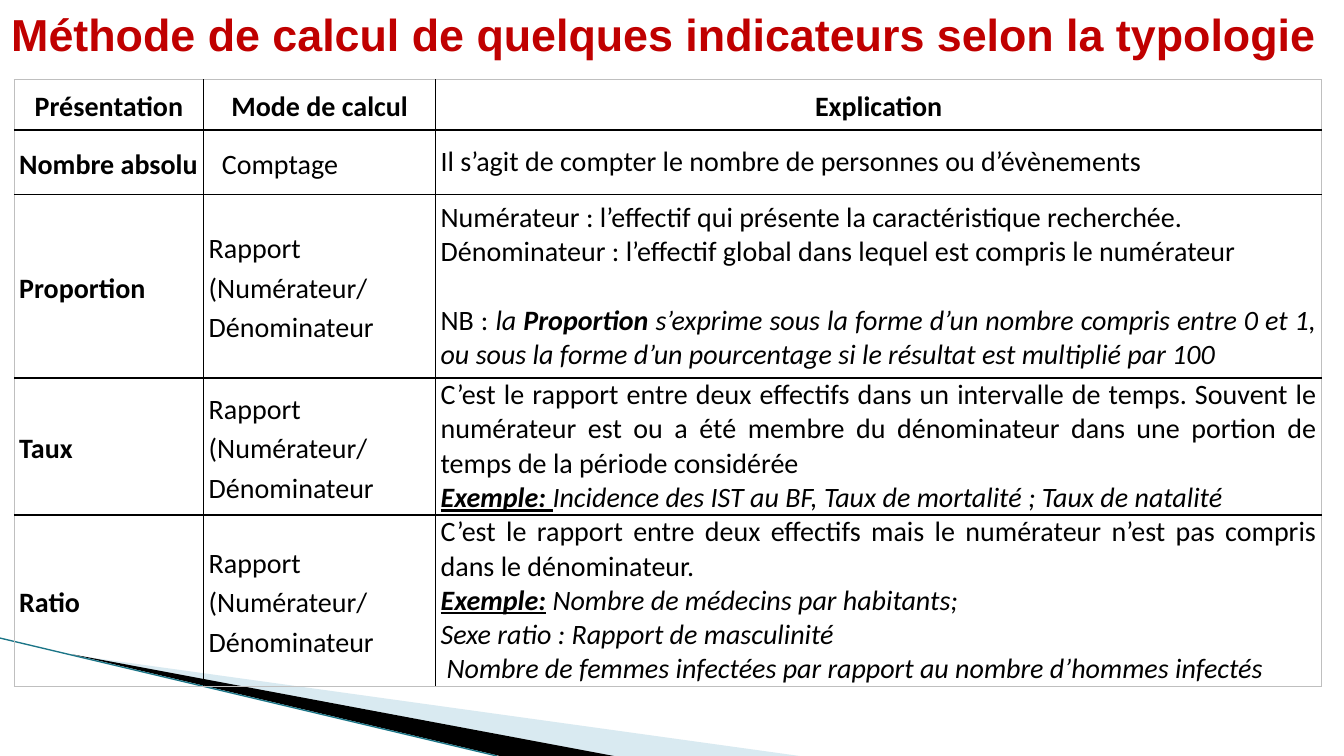
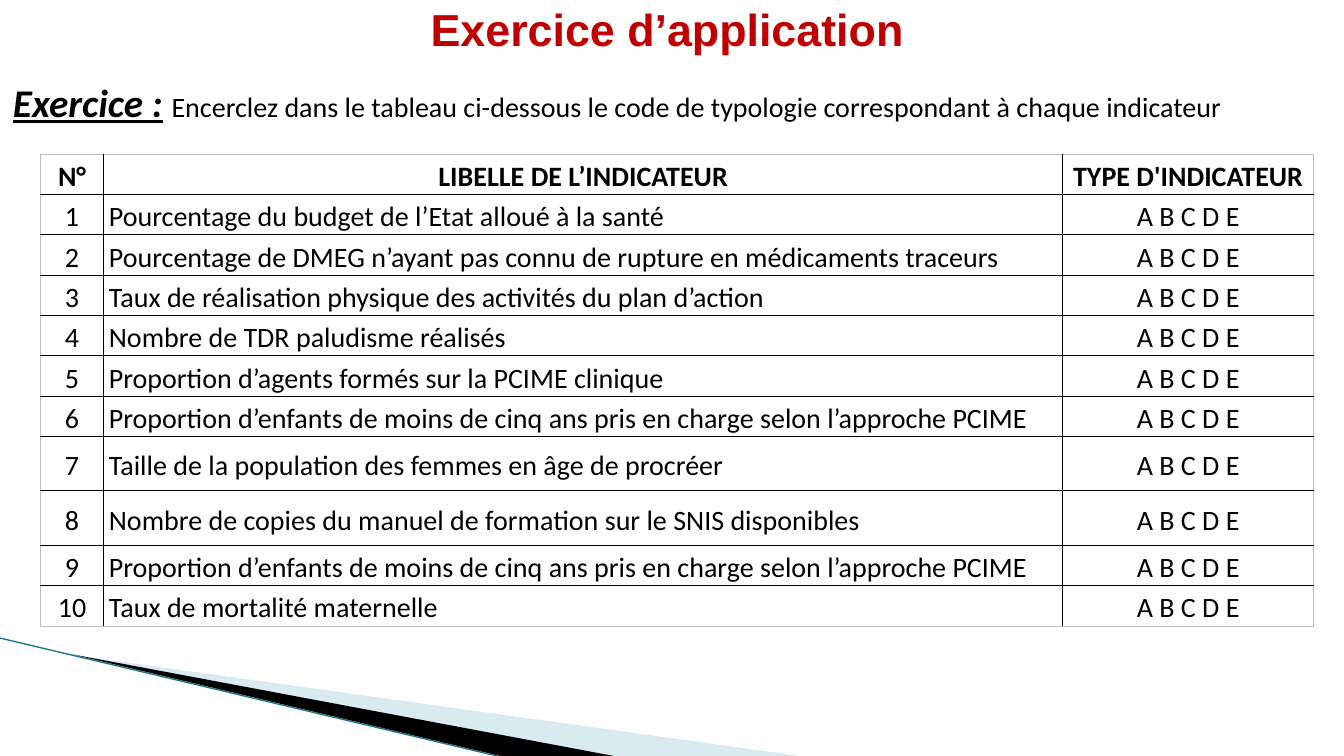
from dataclasses import dataclass

from lxml import etree
from pptx import Presentation
from pptx.dml.color import RGBColor
from pptx.enum.text import MSO_ANCHOR, PP_ALIGN
from pptx.oxml.ns import qn
from pptx.util import Inches, Pt

CENTER, JUSTIFY = PP_ALIGN.CENTER, PP_ALIGN.JUSTIFY
MIDDLE, TOP = MSO_ANCHOR.MIDDLE, MSO_ANCHOR.TOP


@dataclass(frozen=True)
class Theme:
    ink: str = "000000"
    title: str = "C00000"
    pale: str = "A0CBDC"
    teal: str = "1B7587"
    edge: str = "BFBFBF"
    head: str = "Arial"
    body: str = "Calibri"
    big: int = 32
    lead: int = 28
    base: int = 20
    loose: float = 1.15


T = Theme()

# Slide 1: each paragraph is a string, a list of (text, marks) runs,
# or a (paragraph, format) pair
RATIO = ["Rapport (Numérateur/", "Dénominateur"]
METHODS = [
    ("Nombre absolu", [("Comptage", {"left": 0.13})],
     ["Il s’agit de compter le nombre de personnes ou d’évènements"]),
    ("Proportion", RATIO, [
        "Numérateur : l’effectif qui présente la caractéristique recherchée.",
        "Dénominateur : l’effectif global dans lequel est compris le numérateur",
        ([("NB : ", ""), ("la ", "i"), ("Proportion", "bi"),
          (" s’exprime sous la forme d’un nombre compris entre 0 et 1, "
           "ou sous la forme d’un pourcentage si le résultat est multiplié "
           "par 100", "i")], {"before": 24.4})]),
    ("Taux", RATIO, [
        "C’est le rapport entre deux effectifs dans un intervalle de temps. "
        "Souvent le numérateur est ou a été membre du dénominateur dans une "
        "portion de temps de la période considérée",
        [("Exemple: ", "biu"),
         ("Incidence des IST au BF, Taux de mortalité ; Taux de natalité", "i")]]),
    ("Ratio", RATIO, [
        "C’est le rapport entre deux effectifs mais le numérateur n’est pas "
        "compris dans le dénominateur.",
        [("Exemple:", "biu"), (" Nombre de médecins par habitants;", "i")],
        [("Sexe ratio : Rapport de masculinité", "i")],
        ([("Nombre de femmes infectées par rapport au nombre d’hommes infectés",
           "i")], {"left": 0.06})]),
]

# Slide 2
LABELS = [
    "Pourcentage du budget de l’Etat alloué à la santé",
    "Pourcentage de DMEG n’ayant pas connu de rupture en médicaments traceurs",
    "Taux de réalisation physique des activités du plan d’action",
    "Nombre de TDR paludisme réalisés",
    "Proportion d’agents formés sur la PCIME clinique",
    "Proportion d’enfants de moins de cinq ans pris en charge selon l’approche PCIME",
    "Taille de la population des femmes en âge de procréer",
    "Nombre de copies du manuel de formation sur le SNIS disponibles",
    "Proportion d’enfants de moins de cinq ans pris en charge selon l’approche PCIME",
    "Taux de mortalité maternelle",
]


def color(code):
    return RGBColor.from_string(code)


def write(frame, text, first=True, size=T.base, font=T.body, ink=T.ink,
          marks="", align=JUSTIFY, lines=1.0, before=0, left=0):
    """Write one paragraph; marks holds b, i and u."""
    par = frame.paragraphs[0] if first else frame.add_paragraph()
    par.alignment, par.line_spacing = align, lines
    if before:
        par.space_before = Pt(before)
    if left:
        par._p.get_or_add_pPr().set("marL", str(Inches(left)))
    runs = [(text, marks)] if isinstance(text, str) else text
    for words, style, *sizes in runs:
        run = par.add_run()
        run.text = words
        face = run.font
        face.name, face.size = font, Pt(sizes[0] if sizes else size)
        face.bold, face.italic, face.underline = (m in style for m in "biu")
        face.color.rgb = color(ink)


def box(slide, area, text, anchor=TOP, inset=0.1, **fmt):
    frame = slide.shapes.add_textbox(*map(Inches, area)).text_frame
    frame.word_wrap, frame.vertical_anchor = True, anchor
    frame.margin_left = frame.margin_right = Inches(inset)
    write(frame, text, **fmt)


def title(slide, area, text):
    box(slide, area, text, MIDDLE, inset=0.05, size=T.big, font=T.head,
        ink=T.title, marks="b", align=CENTER, lines=0.8)


def wedge(slide, points, fill, alpha=None):
    first, *rest = [(Inches(x), Inches(y)) for x, y in points]
    path = slide.shapes.build_freeform(*first)
    path.add_line_segments(rest, close=True)
    shape = path.convert_to_shape()
    shape.shadow.inherit = False
    shape.fill.solid()
    shape.fill.fore_color.rgb = color(fill)
    shape.line.fill.background()
    if alpha:
        tone = shape.fill._xPr.find(".//" + qn("a:srgbClr"))
        etree.SubElement(tone, qn("a:alpha")).set("val", str(alpha * 1000))


def decor(slide):
    """Draw the corner wedges and the slanted line."""
    wedge(slide, [(0.73, 6.5), (7.93, 7.5), (6.08, 7.5)], T.pale, 40)
    wedge(slide, [(0.71, 6.49), (6.09, 7.5), (4.96, 7.5)], T.ink)
    ends = map(Inches, (0, 6.33, 4.93, 7.5))
    line = slide.shapes.add_connector(1, *ends)
    line.line.color.rgb = color(T.teal)
    line.line.width = Pt(0.95)
    etree.SubElement(line._element.spPr, qn("a:effectLst"))


def border(cell, sides):
    """Set the four edges from (side, is outer) pairs."""
    props = cell._tc.get_or_add_tcPr()
    for side, outer in sides:
        edge = etree.SubElement(props, qn("a:ln" + side))
        edge.set("w", str(Pt(0.5 if outer else 1)))
        fill = etree.SubElement(edge, qn("a:solidFill"))
        tone = etree.SubElement(fill, qn("a:srgbClr"))
        tone.set("val", T.edge if outer else T.ink)


def fill_cell(cell, paras, **fmt):
    cell.vertical_anchor = MIDDLE
    cell.margin_left = cell.margin_right = Inches(0.05)
    cell.margin_top = cell.margin_bottom = 0
    for n, para in enumerate(paras):
        text, extra = para if isinstance(para, tuple) else (para, {})
        write(cell.text_frame, text, first=n == 0, **{**fmt, **extra})


def grid(slide, spot, cols, rows, data, forms):
    """Add a table; forms gives the format of each body column."""
    size = (sum(cols), sum(rows))
    table = slide.shapes.add_table(
        len(rows), len(cols), *map(Inches, (*spot, *size))).table
    table.first_row = table.horz_banding = False
    for col, width in zip(table.columns, cols):
        col.width = Inches(width)
    for row, height in zip(table.rows, rows):
        row.height = Inches(height)
    head = {"marks": "b", "align": CENTER, "lines": T.loose}
    for r, line in enumerate(data):
        for c, item in enumerate(line):
            cell = table.cell(r, c)
            border(cell, [("L", c == 0), ("R", c == len(cols) - 1),
                          ("T", r == 0), ("B", r == len(rows) - 1)])
            cell.fill.background()
            paras = [item] if isinstance(item, str) else item
            fill_cell(cell, paras, **(forms[c] if r else head))


def methods(slide):
    title(slide, (0, 0.1, 13.18, 0.56),
          "Méthode de calcul de quelques indicateurs selon la typologie")
    heads = ("Présentation", "Mode de calcul", "Explication")
    forms = [{"marks": "b", "lines": T.loose}, {"lines": T.loose}, {}]
    grid(slide, (0.14, 0.79), [1.88, 2.3, 8.79], [0.5, 0.64, 1.82, 1.36, 1.7],
         [heads, *METHODS], forms)


def practice(slide):
    title(slide, (0.03, 0, 13.18, 0.66), "Exercice d’application")
    box(slide, (0.03, 0.66, 13.27, 0.64),
        [("Exercice :", "biu", T.lead), (" ", "", T.lead),
         ("Encerclez dans le tableau ci-dessous le code de typologie "
          "correspondant à chaque indicateur", "")], lines=T.loose)
    heads = ("N°", "LIBELLE DE L’INDICATEUR", "TYPE D'INDICATEUR")
    body = [(str(n), text, "A B C D E") for n, text in enumerate(LABELS, 1)]
    mid = {"align": CENTER, "lines": T.loose}
    rows = [0.54 if n in (7, 8) else 0.4 for n in range(len(body) + 1)]
    grid(slide, (0.4, 1.53), [0.63, 9.51, 2.49], rows,
         [heads, *body], [mid, {"lines": T.loose}, mid])


def main():
    deck = Presentation()
    deck.slide_width, deck.slide_height = Inches(13.33), Inches(7.5)
    for build in (methods, practice):
        slide = deck.slides.add_slide(deck.slide_layouts[6])
        decor(slide)
        build(slide)
    deck.save("out.pptx")


if __name__ == "__main__":
    main()
